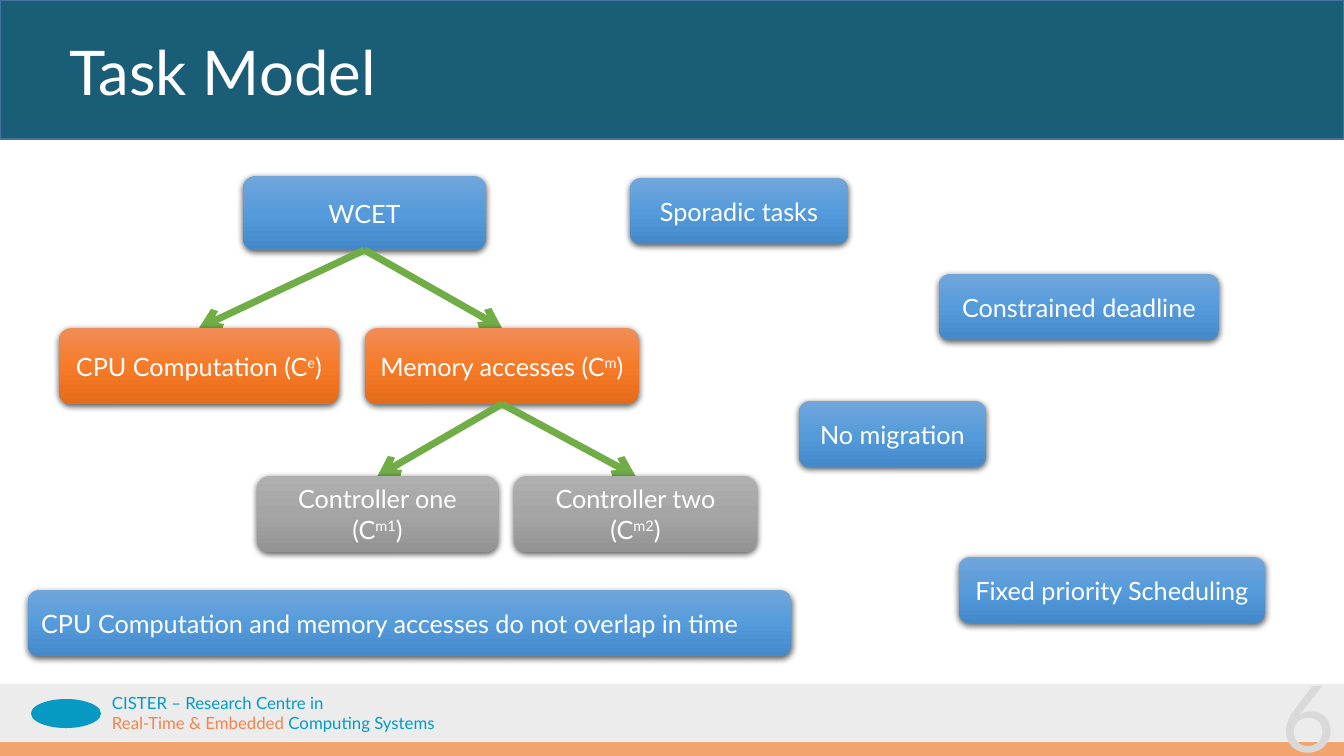
from lxml import etree
from pptx import Presentation
from pptx import util as u
from pptx.dml.color import RGBColor
from pptx.enum import shapes, text
from pptx.oxml.ns import qn

PX = 914400 / 100.8
FACE = "Lato"
WHITE, AQUA, CORAL = "FFFFFF", "009BC8", "F5834D"
BLUE = ("71A6DB", "559BDB", "448ACA")
ORANGE = ("F18C57", "F67B28", "E56C19")
GRAY = ("AFAFAF", "A5A5A5", "939393")
LEFT, MID, RIGHT = text.PP_ALIGN.LEFT, text.PP_ALIGN.CENTER, text.PP_ALIGN.RIGHT
TOP, BOTTOM = 0, 2  # connection sites


def px(*vals):
    return [u.Emu(round(v * PX)) for v in vals]


def rgb(code):
    return RGBColor.from_string(code)


def sub(node, tag, **attrs):
    return etree.SubElement(node, qn(tag), attrs)


def style(para, size, color=None, align=LEFT):
    para.alignment = align
    para.font.size = u.Pt(size)
    para.font.name = FACE
    if color:
        para.font.color.rgb = rgb(color)


def block(slide, area, color, kind=shapes.MSO_SHAPE.RECTANGLE, edge=None):
    shape = slide.shapes.add_shape(kind, *px(*area))
    shape.shadow.inherit = False
    shape.fill.solid()
    shape.fill.fore_color.rgb = rgb(color)
    if edge:
        shape.line.color.rgb = rgb(edge)
        shape.line.width = u.Pt(1)
    else:
        shape.line.fill.background()
    return shape


def label(slide, area):
    box = slide.shapes.add_textbox(*px(*area))
    box.text_frame.word_wrap = True
    return box.text_frame


def node(slide, area, words, tones, sup="", align=MID):
    """Glossy rounded box; sup is the raised index of a trailing (C)."""
    shape = block(slide, area, tones[1], shapes.MSO_SHAPE.ROUNDED_RECTANGLE)
    # Three-tone vertical gradient
    shape.fill.gradient()
    shape.fill.gradient_angle = 270
    props = shape._element.spPr
    stops = props.find(".//" + qn("a:gsLst"))
    for stop in list(stops):
        stops.remove(stop)
    for spot, tone in enumerate(tones):
        stop = sub(stops, "a:gs", pos=str(spot * 50000))
        sub(stop, "a:srgbClr", val=tone)
    # Soft shadow below
    cast = sub(props.find(qn("a:effectLst")), "a:outerShdw", blurRad="57150",
               dist="19050", dir="5400000", algn="ctr", rotWithShape="0")
    sub(sub(cast, "a:srgbClr", val="000000"), "a:alpha", val="63000")
    # Wording
    frame = shape.text_frame
    frame.word_wrap = True
    frame.vertical_anchor = text.MSO_ANCHOR.MIDDLE
    para = frame.paragraphs[0]
    style(para, 18, WHITE, align)
    para.add_run().text = words + (" (C" if sup else "")
    if sup:
        run = para.add_run()
        run.text = sup
        run.font._element.set("baseline", "30000")
        para.add_run().text = ")"
    return shape


def arrow(slide, parent, child):
    line = slide.shapes.add_connector(shapes.MSO_CONNECTOR.STRAIGHT, 0, 0, 0, 0)
    line.begin_connect(parent, BOTTOM)
    line.end_connect(child, TOP)
    line.line.color.rgb = rgb("70AD47")
    line.line.width = u.Pt(5)
    sub(line.line._get_or_add_ln(), "a:tailEnd", type="arrow")
    sub(line._element.spPr, "a:effectLst")
    child._element.addprevious(line._element)  # head tucks under the box


def frame(slide):
    # Bands
    block(slide, (0, 684, 1344, 57), "ECECEC")
    block(slide, (0, 0, 1344, 139), "1A5D76", edge="43739E")
    strip = block(slide, (0, 742, 1344, 14), "ED7D31")
    tint = strip._element.spPr.find(qn("a:solidFill"))[0]
    sub(tint, "a:alpha", val="70000")

    # Emblem and centre name
    block(slide, (31, 699, 70, 29), "0599C3", shapes.MSO_SHAPE.OVAL)
    name = label(slide, (112, 693, 331, 40))
    name.margin_left = name.margin_right = name.margin_top = name.margin_bottom = 0
    rows = [[("CISTER – Research Centre in", AQUA)],
            [("Real-Time & Embedded ", CORAL), ("Computing Systems", AQUA)]]
    for i, row in enumerate(rows):
        para = name.add_paragraph() if i else name.paragraphs[0]
        style(para, 12)
        for words, color in row:
            run = para.add_run()
            run.text = words
            run.font.color.rgb = rgb(color)

    # Title
    title = slide.shapes.title
    slide.shapes._spTree.append(title._element)
    title.left, title.top, title.width, title.height = px(59, 24, 1159, 90)
    title.text_frame.text = "Task Model"
    title.text_frame.auto_size = text.MSO_AUTO_SIZE.NONE
    title.text_frame.vertical_anchor = text.MSO_ANCHOR.BOTTOM
    para = title.text_frame.paragraphs[0]
    style(para, 44, WHITE)
    para.line_spacing = 0.9

    # Page number
    page = label(slide, (1196, 655, 149, 108)).paragraphs[0]
    page.text = "6"
    style(page, 66, "D9D9D9", RIGHT)


def main():
    prs = Presentation()
    prs.slide_width, prs.slide_height = px(1344, 756)
    slide = prs.slides.add_slide(prs.slide_layouts[5])
    frame(slide)

    # Execution time tree
    wcet = node(slide, (243, 176, 243, 74), "WCET", BLUE)
    cpu = node(slide, (59, 328, 280, 76), "CPU Computation", ORANGE, "e")
    mem = node(slide, (365, 328, 274, 76), "Memory accesses", ORANGE, "m")
    one = node(slide, (257, 476, 241, 76), "Controller one", GRAY, "m1")
    two = node(slide, (514, 476, 243, 76), "Controller two", GRAY, "m2")
    for parent, child in ((wcet, cpu), (wcet, mem), (mem, one), (mem, two)):
        arrow(slide, parent, child)

    # Assumptions
    for left, top, width, words in (
            (939, 274, 280, "Constrained deadline"),
            (630, 178, 218, "Sporadic tasks"),
            (799, 401, 187, "No migration"),
            (959, 557, 306, "Fixed priority Scheduling")):
        node(slide, (left, top, width, 66), words, BLUE)
    node(slide, (28, 590, 763, 66),
         "CPU Computation and memory accesses do not overlap in time",
         BLUE, align=LEFT)

    prs.save("out.pptx")


if __name__ == "__main__":
    main()
